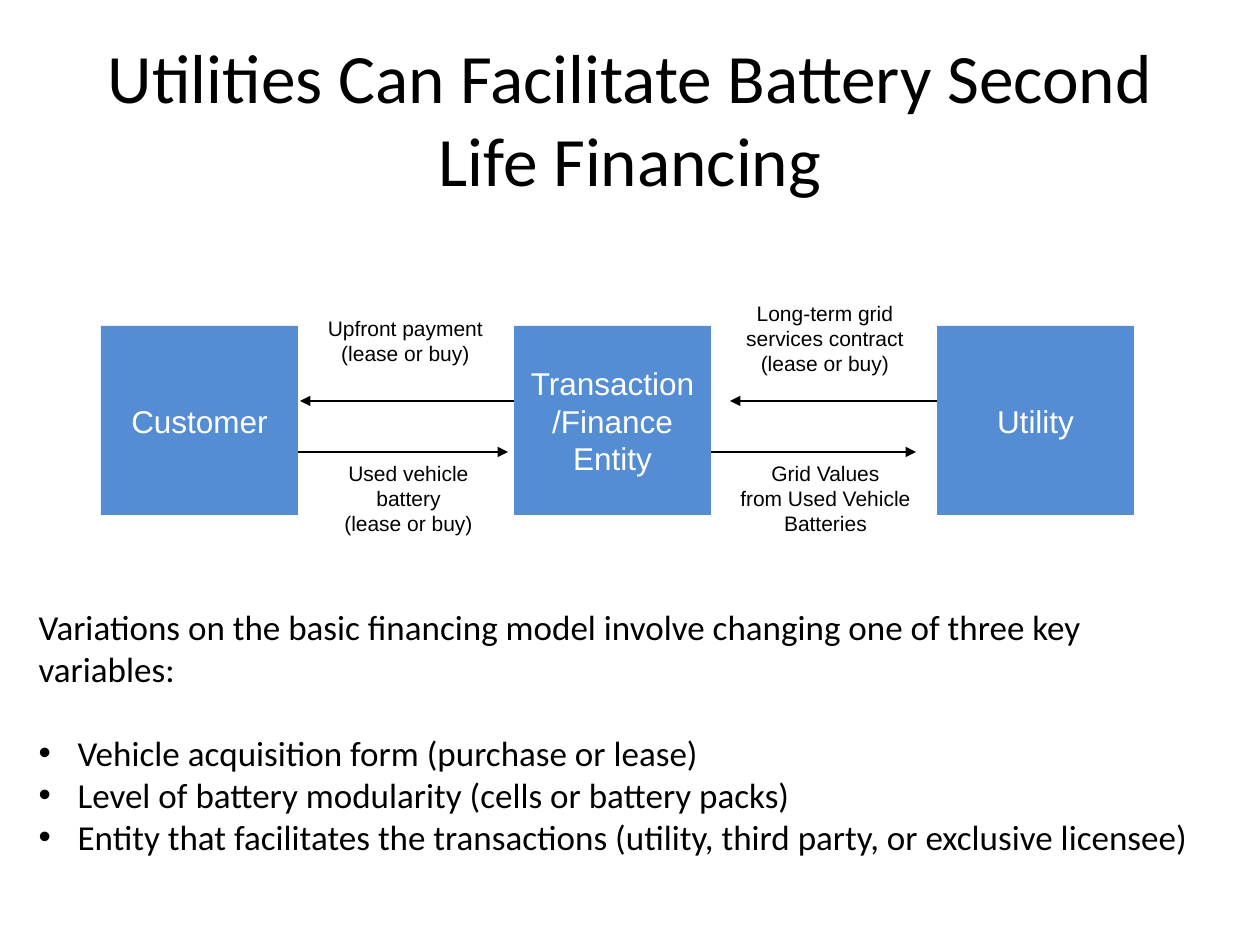
from dataclasses import dataclass

from lxml.etree import SubElement
from pptx import Presentation
from pptx.dml.color import RGBColor
from pptx.enum.shapes import MSO_CONNECTOR, MSO_SHAPE
from pptx.enum.text import MSO_ANCHOR, MSO_AUTO_SIZE, PP_ALIGN
from pptx.oxml.ns import qn
from pptx.util import Emu, Pt


@dataclass(frozen=True)
class Theme:
    """Colours, fonts and type sizes in points."""
    ink: RGBColor = RGBColor(0, 0, 0)
    pale: RGBColor = RGBColor(255, 255, 255)
    blue: RGBColor = RGBColor(0x54, 0x8D, 0xD4)
    main: str = "Calibri"
    chart: str = "Arial"
    head: float = 39.6
    body: int = 20
    node: int = 18
    note: int = 12
    rule: float = 0.75


THEME = Theme()
NODES = [
    (0, ["Customer"]),
    (413, ["Transaction", "/Finance Entity"]),
    (836, ["Utility"]),
]
FLOWS = [
    (424, 199, 75),
    (189, 407, 126),
    (854, 629, 75),
    (597, 815, 126),
]
NOTES = [
    (185, -17, 239, 71, ["Upfront payment", "(lease or buy)"]),
    (191, 128, 233, 95, ["Used vehicle", "battery", "(lease or buy)"]),
    (612, -32, 224, 100, ["Long-term grid services contract", "(lease or buy)"]),
    (591, 128, 267, 95, ["Grid Values", "from Used Vehicle Batteries"]),
]
LEAD = "Variations on the basic financing model involve changing one of three key variables:"
ITEMS = [
    "Vehicle acquisition form (purchase or lease)",
    "Level of battery modularity (cells or battery packs)",
    "Entity that facilitates the transactions (utility, third party, or exclusive licensee)",
]


def px(num):
    """Turn px into EMU."""
    return Emu(round(num * 914400 / 126))


def place(shape, box):
    """Move a shape to a px box."""
    shape.left, shape.top, shape.width, shape.height = map(px, box)


def write(shape, lines, face, size, color, align):
    """Fill a shape with evenly styled paragraphs."""
    frame = shape.text_frame
    frame.word_wrap = True
    frame.auto_size = MSO_AUTO_SIZE.NONE
    frame.text = "\n".join(lines)
    for para in frame.paragraphs:
        para.alignment = align
        para.font.name = face
        para.font.size = Pt(size)
        para.font.color.rgb = color
    return frame


def add_title(slide, box):
    """Set the slide title."""
    title = slide.shapes.title
    place(title, box)
    text = "Utilities Can Facilitate Battery Second Life Financing"
    frame = write(title, [text], THEME.main, THEME.head, THEME.ink, PP_ALIGN.CENTER)
    frame.vertical_anchor = MSO_ANCHOR.MIDDLE


def add_flow(slide, start, end, top):
    """Draw one level arrow."""
    line = slide.shapes.add_connector(
        MSO_CONNECTOR.STRAIGHT, px(start), px(top), px(end), px(top))
    line.line.color.rgb = THEME.ink
    line.line.width = Pt(THEME.rule)
    SubElement(line.line._get_or_add_ln(), qn("a:tailEnd"), type="triangle")
    SubElement(line._element.spPr, qn("a:effectLst"))


def add_node(slide, box, lines):
    """Draw one party of the deal."""
    node = slide.shapes.add_shape(MSO_SHAPE.RECTANGLE, *map(px, box))
    node.shadow.inherit = False
    node.fill.solid()
    node.fill.fore_color.rgb = THEME.blue
    node.line.fill.background()
    frame = write(node, lines, THEME.chart, THEME.node, THEME.pale, PP_ALIGN.CENTER)
    frame.vertical_anchor = MSO_ANCHOR.MIDDLE


def add_deal(slide, box):
    """Draw the parties, their flows and the flow labels."""
    left, top, wide, high = box
    for start, end, drop in FLOWS:
        add_flow(slide, left + start, left + end, top + drop)
    for dx, dy, width, height, lines in NOTES:
        note = slide.shapes.add_textbox(*map(px, (left + dx, top + dy, width, height)))
        write(note, lines, THEME.chart, THEME.note, THEME.ink, PP_ALIGN.CENTER)
    for dx, lines in NODES:
        add_node(slide, (left + dx, top, wide, high), lines)


def add_list(slide, box):
    """Set the lead sentence and its bullets."""
    body = slide.placeholders[1]
    place(body, box)
    frame = write(body, [LEAD, *ITEMS], THEME.main, THEME.body, THEME.ink, PP_ALIGN.LEFT)
    for rank, para in enumerate(frame.paragraphs):
        para.space_before = Pt(24 if rank == 1 else 0)
        props = para._p.get_or_add_pPr()
        dent = px(39) if rank else 0
        props.set("marL", str(dent))
        props.set("indent", str(-dent))
        if rank:
            mark = SubElement(props, qn("a:buChar"), char="•")
        else:
            mark = SubElement(props, qn("a:buNone"))
        props.find(qn("a:defRPr")).addprevious(mark)


def main():
    """Build the slide and save it."""
    deck = Presentation()
    deck.slide_width, deck.slide_height = px(1260), px(945)
    slide = deck.slides.add_slide(deck.slide_layouts[1])
    add_title(slide, (63, 38, 1134, 158))
    add_deal(slide, (101, 326, 197, 189))
    add_list(slide, (26, 599, 1187, 310))
    deck.save("out.pptx")


if __name__ == "__main__":
    main()
